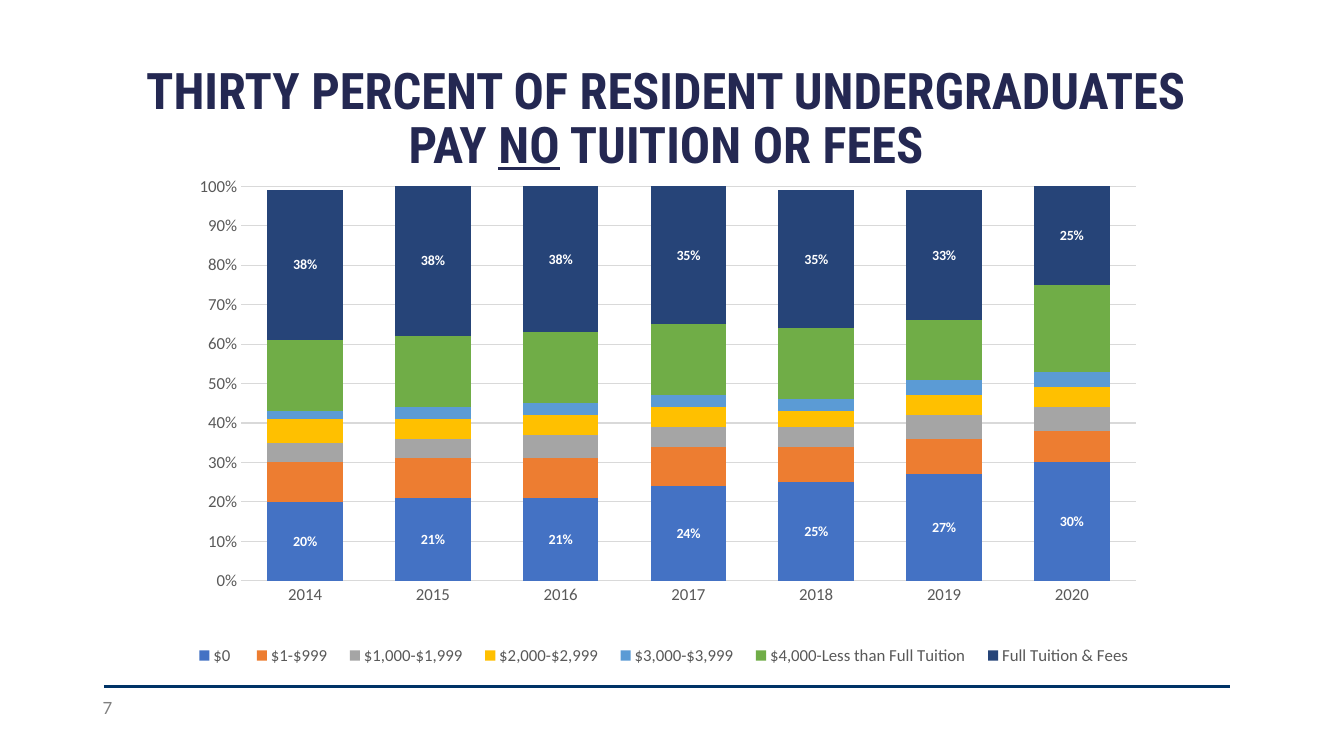
from dataclasses import dataclass

from lxml import etree
from pptx import Presentation
from pptx.chart.data import CategoryChartData
from pptx.dml.color import RGBColor
from pptx.enum.chart import XL_CHART_TYPE, XL_LEGEND_POSITION, XL_TICK_MARK
from pptx.enum.shapes import MSO_CONNECTOR
from pptx.enum.text import MSO_ANCHOR, PP_ALIGN
from pptx.oxml import parse_xml
from pptx.oxml.ns import nsdecls, qn
from pptx.util import Inches, Pt

STACKED = XL_CHART_TYPE.COLUMN_STACKED
BOTTOM = XL_LEGEND_POSITION.BOTTOM
NO_TICK = XL_TICK_MARK.NONE
STRAIGHT = MSO_CONNECTOR.STRAIGHT
TOP, MIDDLE = MSO_ANCHOR.TOP, MSO_ANCHOR.MIDDLE
CENTER = PP_ALIGN.CENTER

# The grid has 100 columns and 100 rows
WIDE, HIGH = Inches(13.33), Inches(7.5)
COL, ROW = WIDE / 100, HIGH / 100

NAVY, RULE, GRAY = "242852", "003366", "808080"
TEXT, GRID, WHITE = "595959", "D9D9D9", "FFFFFF"


@dataclass
class Area:
    col: float
    row: float
    cols: float
    rows: float

    def box(self) -> tuple[int, int, int, int]:
        return (int(self.col * COL), int(self.row * ROW),
                int(self.cols * COL), int(self.rows * ROW))


@dataclass
class Band:
    name: str
    color: str
    shares: tuple[float, ...]
    marked: bool = False


TITLE = Area(0, 8, 100, 18.13)
CHART = Area(12.83, 22.53, 73.14, 70.53)
NUMBER = Area(6.9, 90.93, 22.5, 5.33)
LINE = Area(7.73, 90.8, 83.8, 0)

YEARS = [str(year) for year in range(2014, 2021)]
BANDS = [
    Band("$0 ", "4472C4", (0.2, 0.21, 0.21, 0.24, 0.25, 0.27, 0.3), True),
    Band("$1-$999", "ED7D31", (0.1, 0.1, 0.1, 0.1, 0.09, 0.09, 0.08)),
    Band("$1,000-$1,999", "A5A5A5", (0.05, 0.05, 0.06, 0.05, 0.05, 0.06, 0.06)),
    Band("$2,000-$2,999", "FFC000", (0.06, 0.05, 0.05, 0.05, 0.04, 0.05, 0.05)),
    Band("$3,000-$3,999", "5B9BD5", (0.02, 0.03, 0.03, 0.03, 0.03, 0.04, 0.04)),
    Band("$4,000-Less than Full Tuition", "70AD47",
         (0.18, 0.18, 0.18, 0.18, 0.18, 0.15, 0.22)),
    Band("Full Tuition & Fees", "264478",
         (0.38, 0.38, 0.38, 0.35, 0.35, 0.33, 0.25), True),
]


def rgb(code: str) -> RGBColor:
    return RGBColor.from_string(code)


def style(font, name: str, size: float, color: str, bold: bool = False) -> None:
    font.name, font.size, font.bold = name, Pt(size), bold
    font.color.rgb = rgb(color)


def stroke(line, color: str, width: float) -> None:
    line.color.rgb = rgb(color)
    line.width = Pt(width)


def layout(x: float, y: float, w: float, h: float, inner: bool = False):
    """Build a fixed chart layout from shares of the chart area."""
    parts = [("layoutTarget", "inner")] if inner else []
    parts += [("xMode", "edge"), ("yMode", "edge"),
              ("x", x), ("y", y), ("w", w), ("h", h)]
    body = "".join(f'<c:{tag} val="{val}"/>' for tag, val in parts)
    return parse_xml(f'<c:layout {nsdecls("c")}><c:manualLayout>{body}'
                     '</c:manualLayout></c:layout>')


def add_title(slide) -> None:
    title = slide.shapes.title
    title.left, title.top, title.width, title.height = TITLE.box()
    frame = title.text_frame
    frame.word_wrap = True
    frame.vertical_anchor = TOP
    para = frame.paragraphs[0]
    para.alignment = CENTER
    para.line_spacing = 0.9
    style(para.font, "Roboto Condensed", 36, NAVY, True)
    para.add_run().text = "THIRTY PERCENT OF RESIDENT UNDERGRADUATES "
    para.add_line_break()
    para.add_run().text = "PAY "
    word = para.add_run()
    word.text = "NO"
    word.font.underline = True
    para.add_run().text = " TUITION OR FEES "
    # The break takes the size of the text around it
    brk = para._p.find(qn("a:br"))
    etree.SubElement(brk, qn("a:rPr")).set("sz", "3600")


def add_bars(slide) -> None:
    data = CategoryChartData(number_format="0%")
    data.categories = YEARS
    for band in BANDS:
        data.add_series(band.name, band.shares)
    chart = slide.shapes.add_chart(STACKED, *CHART.box(), data).chart
    chart.has_title = False
    style(chart.font, "Calibri", 12, TEXT)

    # Axes
    years, share = chart.category_axis, chart.value_axis
    for axis in (years, share):
        axis.major_tick_mark = axis.minor_tick_mark = NO_TICK
        style(axis.tick_labels.font, "Calibri", 12, TEXT)
    stroke(years.format.line, GRID, 0.75)
    share.minimum_scale, share.maximum_scale = 0, 1
    share.major_unit = 0.1
    share.format.line.fill.background()
    share.has_major_gridlines = True
    stroke(share.major_gridlines.format.line, GRID, 0.75)
    share.tick_labels.number_format = "0%"
    share.tick_labels.number_format_is_linked = False

    # Bars
    plot = chart.plots[0]
    plot.gap_width, plot.overlap = 69, 100
    plot.vary_by_categories = False
    for band, series in zip(BANDS, plot.series):
        series.format.fill.solid()
        series.format.fill.fore_color.rgb = rgb(band.color)
        if band.marked:
            labels = series.data_labels
            labels.show_value = True
            labels.number_format = "0%"
            labels.number_format_is_linked = False
            style(labels.font, "Calibri", 10, WHITE, True)

    # Legend
    chart.has_legend = True
    legend = chart.legend
    legend.position = BOTTOM
    legend.include_in_layout = False
    style(legend.font, "Calibri", 12, TEXT)

    # Fixed places of plot and legend
    area = chart._chartSpace.chart.plotArea
    for old in area.findall(qn("c:layout")):
        area.remove(old)
    area.insert(0, layout(0.07, 0.03, 0.91, 0.74, inner=True))
    key = legend._element
    for old in key.findall(qn("c:layout")):
        key.remove(old)
    key.find(qn("c:legendPos")).addnext(layout(0.01, 0.88, 0.98, 0.06))


def add_foot(slide) -> None:
    left, top, width, _ = LINE.box()
    line = slide.shapes.add_connector(STRAIGHT, left, top, left + width, top)
    stroke(line.line, RULE, 2.25)
    etree.SubElement(line._element.spPr, qn("a:effectLst"))

    frame = slide.shapes.add_textbox(*NUMBER.box()).text_frame
    frame.word_wrap = True
    frame.vertical_anchor = MIDDLE
    para = frame.paragraphs[0]
    para.text = "7"
    style(para.font, "Lato", 12, GRAY)


def main() -> None:
    deck = Presentation()
    deck.slide_width, deck.slide_height = WIDE, HIGH
    slide = deck.slides.add_slide(deck.slide_layouts[5])
    add_title(slide)
    add_bars(slide)
    add_foot(slide)
    deck.save("out.pptx")


if __name__ == "__main__":
    main()
